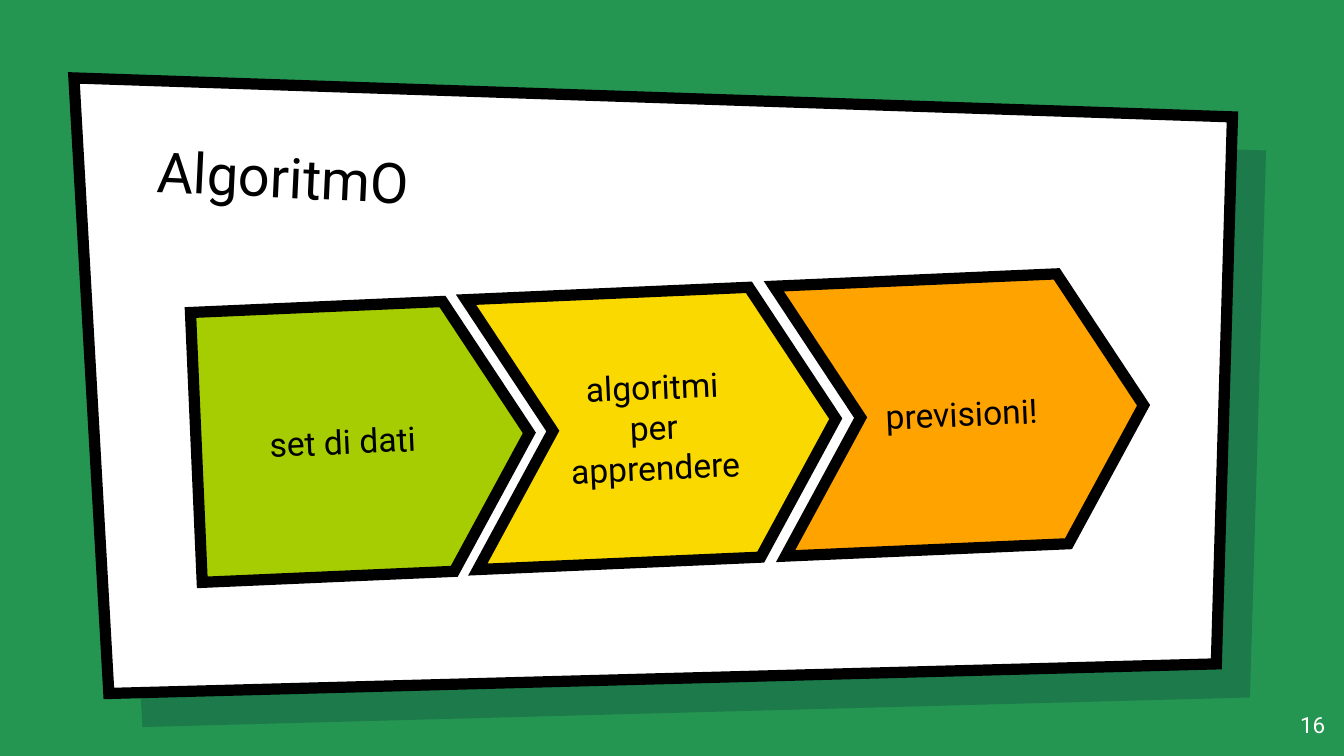
"""Build the slide with a three-step algorithm process on a tilted card."""
from dataclasses import dataclass

import lxml.etree
import pptx
import pptx.dml.color
import pptx.enum.shapes
import pptx.enum.text
import pptx.oxml.ns
import pptx.util

Inches = pptx.util.Inches
Pt = pptx.util.Pt
RGBColor = pptx.dml.color.RGBColor
MSO_SHAPE = pptx.enum.shapes.MSO_SHAPE
MSO_ANCHOR = pptx.enum.text.MSO_ANCHOR
PP_ALIGN = pptx.enum.text.PP_ALIGN
qn = pptx.oxml.ns.qn

GREEN = RGBColor(0x24, 0x96, 0x51)
NAVY = RGBColor(0x00, 0x19, 0x36)
WHITE = RGBColor(0xFF, 0xFF, 0xFF)
BLACK = RGBColor(0x00, 0x00, 0x00)
LIME = RGBColor(0xA6, 0xCD, 0x02)
YELLOW = RGBColor(0xFA, 0xD9, 0x00)
ORANGE = RGBColor(0xFF, 0xA3, 0x00)

FONT = "Roboto"
SLIDE_WIDTH = Inches(10)
SLIDE_HEIGHT = SLIDE_WIDTH * 9 // 16
CARD = [(0.55, 0.58), (9.17, 0.87), (9.05, 4.94), (0.81, 5.16)]
SHADOW_OFFSET = 0.25
STEP_HEIGHT = 2.01
STEP_ROTATION = -2.5


@dataclass
class Step:
    text: str
    kind: MSO_SHAPE
    left: float
    top: float
    width: float
    color: RGBColor


STEPS = [
    Step("set di dati", MSO_SHAPE.PENTAGON, 1.46, 2.27, 2.48, LIME),
    Step("previsioni!", MSO_SHAPE.CHEVRON, 5.8, 2.07, 2.71, ORANGE),
    Step("algoritmi per apprendere", MSO_SHAPE.CHEVRON, 3.51, 2.17, 2.71, YELLOW),
]


def set_fill(sp, color: RGBColor) -> None:
    sp.shadow.inherit = False
    sp.fill.solid()
    sp.fill.fore_color.rgb = color


def set_outline(sp) -> None:
    sp.line.color.rgb = BLACK
    sp.line.width = Pt(6)
    ln = sp.line._get_or_add_ln()
    lxml.etree.SubElement(ln, qn("a:miter")).set("lim", "800000")


def set_text(sp, text: str, size: int, color: RGBColor,
             align: PP_ALIGN, anchor: MSO_ANCHOR) -> None:
    tf = sp.text_frame
    tf.text = text
    tf.word_wrap = True
    tf.vertical_anchor = anchor
    tf.margin_left = tf.margin_right = Inches(0.1)
    tf.margin_top = tf.margin_bottom = Inches(0.1)
    p = tf.paragraphs[0]
    p.alignment = align
    font = p.runs[0].font
    font.name = FONT
    font.size = Pt(size)
    font.color.rgb = color


def add_card(s, offset: float, color: RGBColor):
    points = [(Inches(x + offset), Inches(y + offset)) for x, y in CARD]
    builder = s.shapes.build_freeform(*points[0])
    builder.add_line_segments(points[1:], close=True)
    sp = builder.convert_to_shape()
    set_fill(sp, color)
    return sp


def add_step(s, step: Step) -> None:
    sp = s.shapes.add_shape(step.kind, Inches(step.left), Inches(step.top),
                            Inches(step.width), Inches(STEP_HEIGHT))
    sp.adjustments[0] = 0.3
    sp.rotation = STEP_ROTATION
    set_fill(sp, step.color)
    set_outline(sp)
    set_text(sp, step.text, 18, BLACK, PP_ALIGN.CENTER, MSO_ANCHOR.MIDDLE)


def main() -> None:
    prs = pptx.Presentation()
    prs.slide_width = SLIDE_WIDTH
    prs.slide_height = SLIDE_HEIGHT
    s = prs.slides.add_slide(prs.slide_layouts[6])
    s.background.fill.solid()
    s.background.fill.fore_color.rgb = GREEN

    shadow = add_card(s, SHADOW_OFFSET, NAVY)
    shadow.line.fill.background()
    srgb = shadow._element.spPr.find(qn("a:solidFill")).find(qn("a:srgbClr"))
    lxml.etree.SubElement(srgb, qn("a:alpha")).set("val", "22000")
    set_outline(add_card(s, 0, WHITE))

    title = s.shapes.add_textbox(Inches(1.07), Inches(0.96), Inches(7.69), Inches(0.83))
    title.rotation = 2.7
    set_text(title, "AlgoritmO", 30, BLACK, PP_ALIGN.LEFT, MSO_ANCHOR.BOTTOM)

    for step in STEPS:
        add_step(s, step)

    number = s.shapes.add_textbox(Inches(9.36), Inches(5.19), Inches(0.6), Inches(0.43))
    set_text(number, "16", 12, WHITE, PP_ALIGN.RIGHT, MSO_ANCHOR.TOP)
    prs.save("out.pptx")


if __name__ == "__main__":
    main()
